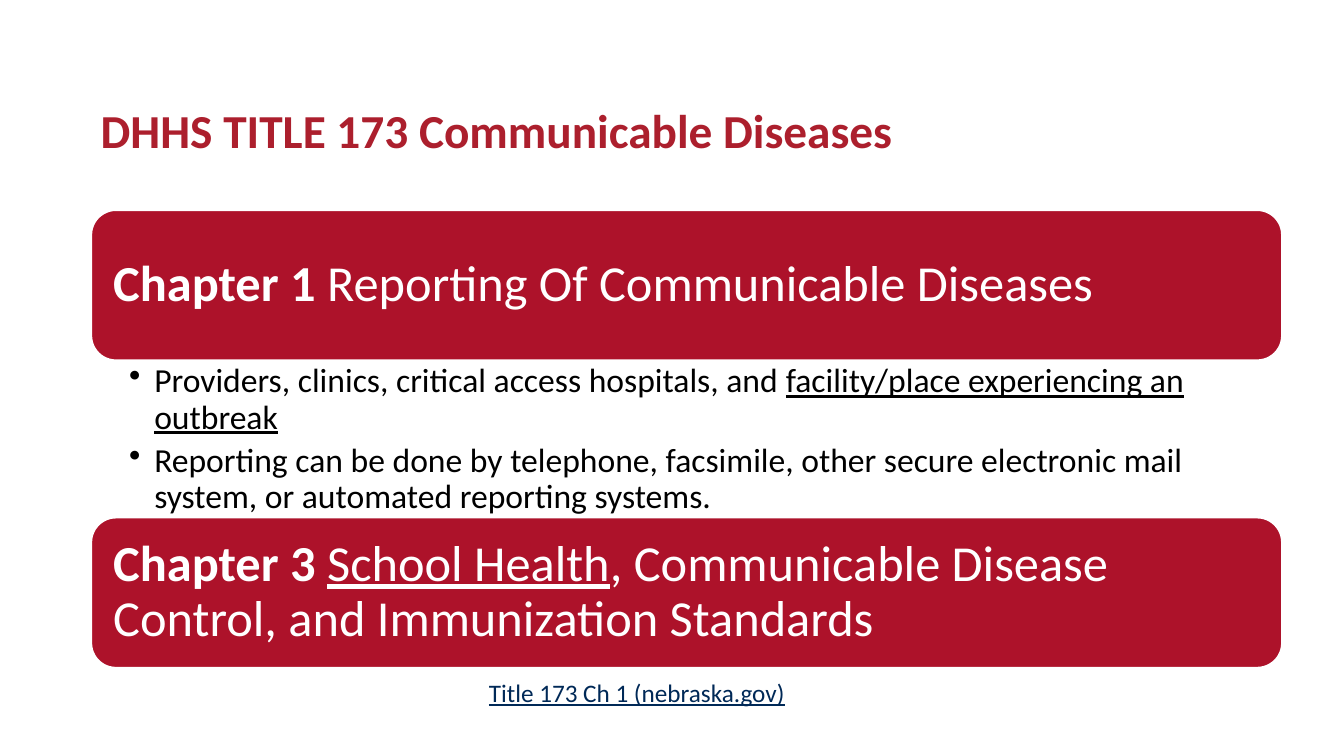
from lxml.etree import SubElement as Sub
from pptx import Presentation
from pptx.dml.color import RGBColor as Rgb
from pptx.enum.shapes import MSO_SHAPE as Kind
from pptx.enum.text import MSO_ANCHOR as Anchor, MSO_AUTO_SIZE as Auto
from pptx.oxml.ns import qn
from pptx.util import Inches as Inch, Pt

HUES = {"title": "AC1F2D", "bar": "AD122A", "white": "FFFFFF",
        "black": "000000", "link": "002957"}
LEFT, WIDE = 0.9, 11.82
TOP, BAR, BODY = 2.08, 1.5, 1.55


def hue(name):
    """Return a named colour."""
    return Rgb.from_string(HUES[name])


def setup(frame, pads, anchor=Anchor.TOP, wrap=True):
    """Set insets, anchor and wrapping of a text frame."""
    left, top, right, low = map(Inch, pads)
    frame.margin_left, frame.margin_top = left, top
    frame.margin_right, frame.margin_bottom = right, low
    frame.vertical_anchor, frame.word_wrap = anchor, wrap


def write(para, runs, size, color, line=0.9):
    """Fill a paragraph with (text, style) runs, b for bold and u for underline."""
    para.line_spacing = line
    font = para.font
    font.name, font.size, font.color.rgb = "Calibri", Pt(size), hue(color)
    for text, style in runs:
        run = para.add_run()
        run.text = text
        face = run.font
        face.name, face.size, face.color.rgb = "Calibri", Pt(size), hue(color)
        face.bold, face.underline = "b" in style, "u" in style


def label(slide, box, runs, size, color, pads, line=0.9, **opts):
    """Add a one-paragraph text box."""
    frame = slide.shapes.add_textbox(*map(Inch, box)).text_frame
    setup(frame, pads, **opts)
    write(frame.paragraphs[0], runs, size, color, line)
    return frame


def chapter(slide, top, runs):
    """Add a rounded chapter bar."""
    box = map(Inch, (LEFT, top, WIDE, BAR))
    bar = slide.shapes.add_shape(Kind.ROUNDED_RECTANGLE, *box)
    bar.shadow.inherit = False
    bar.fill.solid()
    bar.fill.fore_color.rgb = hue("bar")
    bar.line.color.rgb, bar.line.width = hue("white"), Pt(2)
    setup(bar.text_frame, [0.15] * 4, Anchor.MIDDLE)
    para = bar.text_frame.paragraphs[0]
    para.alignment = 1
    write(para, runs, 36, "white")


def points(slide, top, items):
    """Add a bulleted list."""
    box = map(Inch, (LEFT, top, WIDE, BODY))
    frame = slide.shapes.add_textbox(*box).text_frame
    setup(frame, (0.38, 0.03, 0.19, 0.03))
    for spot, runs in enumerate(items):
        para = frame.add_paragraph() if spot else frame.paragraphs[0]
        para.space_after = Pt(5)
        props = para._p.get_or_add_pPr()
        props.set("marL", str(Inch(0.25)))
        props.set("indent", str(-Inch(0.25)))
        Sub(props, qn("a:buChar"), char="•")
        write(para, runs, 24, "black")


def main():
    """Build and save the slide."""
    deck = Presentation()
    deck.slide_width, deck.slide_height = Inch(13.33), Inch(7.5)
    slide = deck.slides.add_slide(deck.slide_layouts[6])
    label(slide, (LEFT, 0.43, WIDE, 1.14),
          [("DHHS TITLE 173 Communicable Diseases", "b")],
          33.8, "title", (0.1, 0, 0.1, 0), anchor=Anchor.BOTTOM)
    chapter(slide, TOP, [("Chapter 1 ", "b"),
                         ("Reporting Of Communicable Diseases", "")])
    points(slide, TOP + BAR, [
        [("Providers, clinics, critical access hospitals, and ", ""),
         ("facility/place experiencing an outbreak", "u")],
        [("Reporting can be done by telephone, facsimile, other secure "
          "electronic mail system, or automated reporting systems.", "")]])
    chapter(slide, TOP + BAR + BODY, [
        ("Chapter 3 ", "b"), ("School Health", "u"),
        (", Communicable Disease Control, and Immunization Standards", "")])
    link = label(slide, (4.75, 6.67, 3.17, 0.4),
                 [("Title 173 Ch 1 (nebraska.gov)", "u")],
                 18, "link", (0.1, 0.05, 0.1, 0.05), line=1.0, wrap=False)
    link.auto_size = Auto.SHAPE_TO_FIT_TEXT
    deck.save("out.pptx")


if __name__ == "__main__":
    main()
